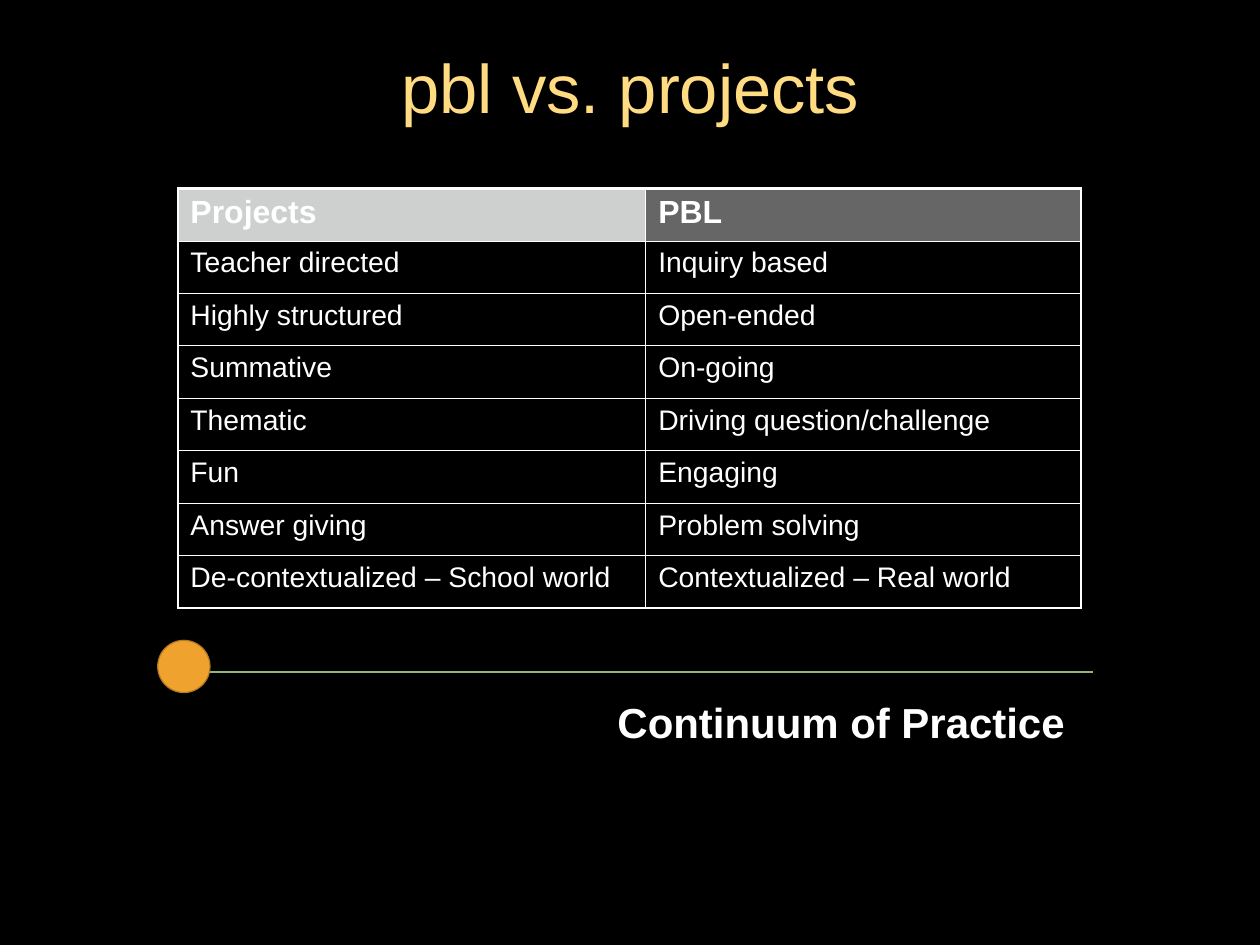
from dataclasses import dataclass

from lxml import etree
from pptx import Presentation
from pptx import util as u
from pptx.dml.color import RGBColor
from pptx.enum import shapes, text
from pptx.oxml import ns

BLACK = RGBColor(0x00, 0x00, 0x00)
WHITE = RGBColor(0xFF, 0xFF, 0xFF)
GOLD = RGBColor(0xFF, 0xDB, 0x82)
SILVER = RGBColor(0xCE, 0xD0, 0xCF)
GRAY = RGBColor(0x66, 0x66, 0x66)
GREEN = RGBColor(0x8F, 0xB9, 0x77)
ORANGE = RGBColor(0xF0, 0xA2, 0x2E)
BROWN = RGBColor(0xB2, 0x78, 0x22)

FONT = "Arial"
OUTER, INNER = 2.25, 1
COLUMN_WIDTHS = (5.28, 4.91)
TABLE_HEIGHT = 4.74
HEADER_FILLS = (SILVER, GRAY)


@dataclass(frozen=True)
class Contrast:
    projects: str
    pbl: str


CONTRASTS = (
    Contrast("Projects", "PBL"),
    Contrast("Teacher directed", "Inquiry based"),
    Contrast("Highly structured", "Open-ended"),
    Contrast("Summative", "On-going"),
    Contrast("Thematic", "Driving question/challenge"),
    Contrast("Fun", "Engaging"),
    Contrast("Answer giving", "Problem solving"),
    Contrast("De-contextualized – School world", "Contextualized – Real world"),
)


def write(paragraph, words: str, size: float, color: RGBColor, bold: bool = False) -> None:
    run = paragraph.add_run()
    run.text = words
    run.font.name = FONT
    run.font.size = u.Pt(size)
    run.font.bold = bold
    run.font.color.rgb = color


def set_borders(cell, widths: dict[str, float]) -> None:
    properties = cell._tc.get_or_add_tcPr()
    for position, (side, width) in enumerate(widths.items()):
        border = etree.Element(ns.qn(f"a:ln{side}"), w=str(u.Pt(width)))
        fill = etree.SubElement(border, ns.qn("a:solidFill"))
        etree.SubElement(fill, ns.qn("a:srgbClr"), val=str(WHITE))
        properties.insert(position, border)


def add_title(slide) -> None:
    title = slide.shapes.title
    title.left, title.top = u.Inches(0.98), u.Inches(0)
    title.width, title.height = u.Inches(12.27), u.Inches(2.06)
    frame = title.text_frame
    frame.auto_size = text.MSO_AUTO_SIZE.NONE
    frame.vertical_anchor = text.MSO_ANCHOR.MIDDLE
    heading = frame.paragraphs[0]
    heading.alignment = text.PP_ALIGN.CENTER
    heading.line_spacing = 0.9
    write(heading, "pbl vs. projects", 55.8, GOLD)


def add_comparison(slide) -> None:
    last_row = len(CONTRASTS) - 1
    comparison = slide.shapes.add_table(
        len(CONTRASTS), len(COLUMN_WIDTHS), u.Inches(2.01), u.Inches(2.13),
        u.Inches(sum(COLUMN_WIDTHS)), u.Inches(TABLE_HEIGHT),
    ).table
    comparison.first_row = comparison.horz_banding = False
    for column, width in zip(comparison.columns, COLUMN_WIDTHS):
        column.width = u.Inches(width)
    for row, contrast in enumerate(CONTRASTS):
        header = row == 0
        for side, words in enumerate((contrast.projects, contrast.pbl)):
            cell = comparison.cell(row, side)
            cell.margin_left = cell.margin_right = u.Inches(0.14)
            cell.margin_top = cell.margin_bottom = u.Inches(0.07)
            if header:
                cell.fill.solid()
                cell.fill.fore_color.rgb = HEADER_FILLS[side]
            else:
                cell.fill.background()
            set_borders(cell, {
                "L": OUTER if side == 0 else INNER,
                "R": OUTER if side == 1 else INNER,
                "T": OUTER if header else INNER,
                "B": OUTER if row == last_row else INNER,
            })
            write(cell.text_frame.paragraphs[0], words, 26 if header else 23, WHITE, header)


def add_continuum(slide) -> None:
    axis = slide.shapes.add_connector(
        shapes.MSO_CONNECTOR.STRAIGHT,
        u.Inches(1.9), u.Inches(7.59), u.Inches(12.33), u.Inches(7.59),
    )
    axis.line.color.rgb = GREEN
    axis.line.width = u.Pt(1.5)
    etree.SubElement(axis._element.spPr, ns.qn("a:effectLst"))

    marker = slide.shapes.add_shape(
        shapes.MSO_SHAPE.OVAL,
        u.Inches(1.78), u.Inches(7.23), u.Inches(0.59), u.Inches(0.59),
    )
    marker.shadow.inherit = False
    marker.fill.solid()
    marker.fill.fore_color.rgb = ORANGE
    marker.line.color.rgb = BROWN
    marker.line.width = u.Pt(1)

    caption = slide.shapes.add_textbox(
        u.Inches(6.87), u.Inches(7.82), u.Inches(5.31), u.Inches(0.68)
    ).text_frame
    caption.word_wrap = False
    caption.auto_size = text.MSO_AUTO_SIZE.SHAPE_TO_FIT_TEXT
    write(caption.paragraphs[0], "Continuum of Practice", 34.1, WHITE, True)


def main() -> None:
    deck = Presentation()
    deck.slide_width, deck.slide_height = u.Inches(14.22), u.Inches(10.67)
    slide = deck.slides.add_slide(deck.slide_layouts.get_by_name("Title Only"))
    slide.background.fill.solid()
    slide.background.fill.fore_color.rgb = BLACK
    add_title(slide)
    add_comparison(slide)
    add_continuum(slide)
    deck.save("out.pptx")


if __name__ == "__main__":
    main()
